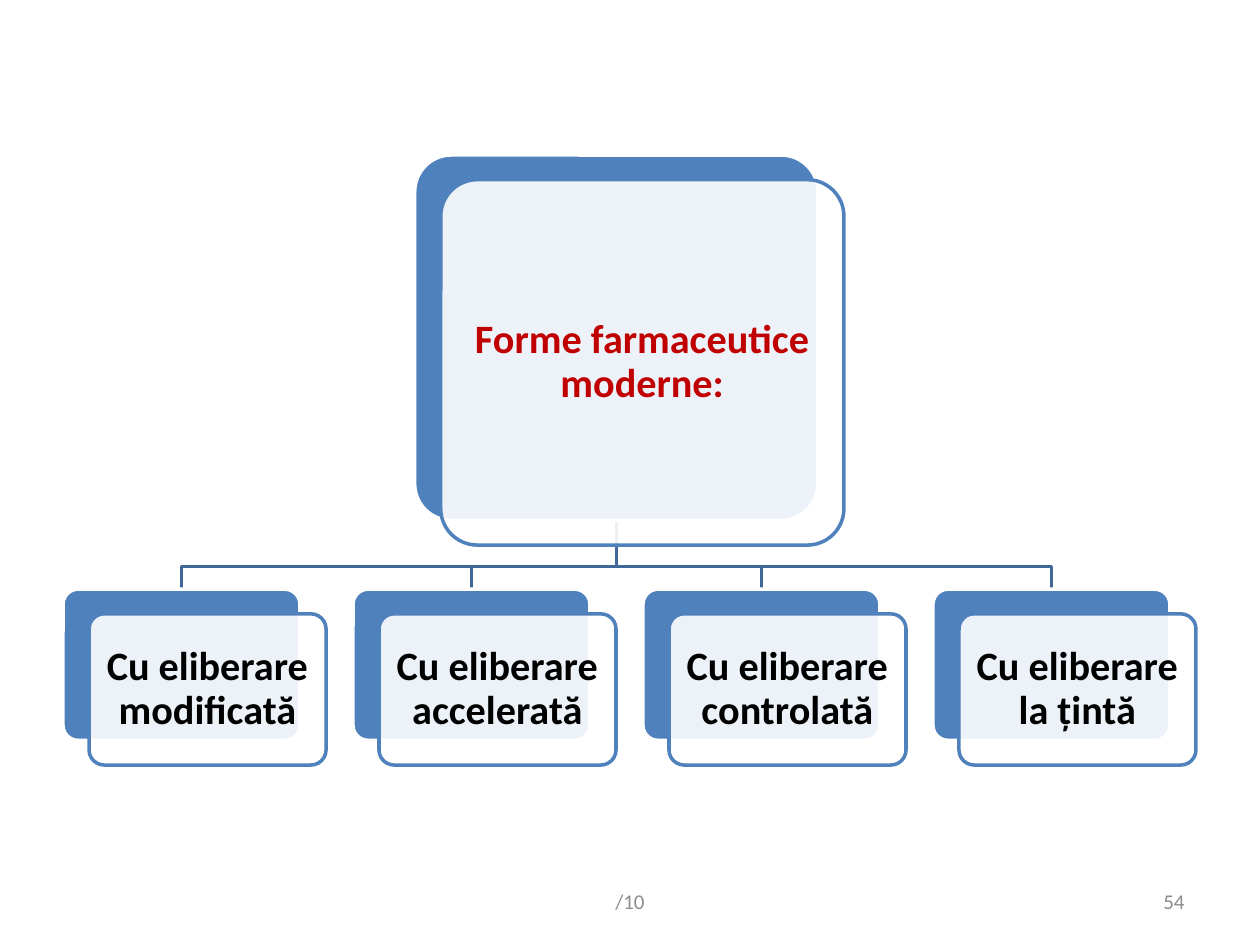
from lxml import etree
from pptx import Presentation
from pptx.dml.color import RGBColor
from pptx.enum.shapes import MSO_SHAPE
from pptx.enum.text import MSO_ANCHOR, PP_ALIGN
from pptx.oxml.ns import qn
from pptx.util import Pt

ROUNDED = MSO_SHAPE.ROUNDED_RECTANGLE
MIDDLE = MSO_ANCHOR.MIDDLE
CENTER, RIGHT = PP_ALIGN.CENTER, PP_ALIGN.RIGHT

WHITE = RGBColor(0xFF, 0xFF, 0xFF)
BLACK = RGBColor(0x00, 0x00, 0x00)
BLUE = RGBColor(0x4F, 0x81, 0xBD)
DARK_BLUE = RGBColor(0x3F, 0x67, 0x97)
RED = RGBColor(0xC0, 0x00, 0x00)
GRAY = RGBColor(0x8C, 0x8C, 0x8C)


class HierarchySlide:
    font = "Calibri"
    line_width = Pt(2)
    corner = 0.1
    card_shift = (14.9, 14.1)
    card_margin = Pt(7.2)

    def __init__(self, page):
        self.page = page

    def label(self, shape, text, size, color, align, bold=False):
        frame = shape.text_frame
        frame.text = text
        frame.word_wrap = True
        frame.vertical_anchor = MIDDLE
        para = frame.paragraphs[0]
        para.alignment = align
        font = para.runs[0].font
        font.name, font.size, font.bold = self.font, Pt(size), bold
        font.color.rgb = color
        return frame

    def panel(self, left, top, width, height, fill, line):
        shape = self.page.shapes.add_shape(
            ROUNDED, Pt(left), Pt(top), Pt(width), Pt(height))
        shape.adjustments[0] = self.corner
        shape.shadow.inherit = False
        shape.fill.solid()
        shape.fill.fore_color.rgb = fill
        shape.line.color.rgb = line
        shape.line.width = self.line_width
        return shape

    def card(self, left, top, width, height, text, color):
        """A blue back panel with a shifted, translucent text panel on it."""
        self.panel(left, top, width, height, BLUE, WHITE)
        right, down = self.card_shift
        front = self.panel(left + right, top + down, width, height, WHITE, BLUE)
        fill_color = front.element.spPr.find(qn("a:solidFill"))[0]
        etree.SubElement(fill_color, qn("a:alpha"), val="90000")
        frame = self.label(front, text, 23, color, CENTER, bold=True)
        frame.paragraphs[0].line_spacing = 0.9
        frame.margin_left = frame.margin_right = self.card_margin
        frame.margin_top = frame.margin_bottom = self.card_margin

    def branch(self, points):
        corners = [(Pt(x), Pt(y)) for x, y in points]
        builder = self.page.shapes.build_freeform(*corners[0])
        builder.add_line_segments(corners[1:], close=False)
        shape = builder.convert_to_shape()
        shape.shadow.inherit = False
        shape.fill.background()
        shape.line.color.rgb = DARK_BLUE
        shape.line.width = self.line_width

    def footer(self, left, width, text, align):
        box = self.page.shapes.add_textbox(
            Pt(left), Pt(500.5), Pt(width), Pt(28.75))
        self.label(box, text, 12, GRAY, align)


def main():
    deck = Presentation()
    deck.slide_width, deck.slide_height = Pt(720), Pt(540)
    slide = HierarchySlide(deck.slides.add_slide(deck.slide_layouts[6]))

    # Layout of the two levels
    root_left, root_top, root_width, root_height = 237, 88.6, 230.4, 208.8
    child_top, child_width, child_height = 336.7, 135.4, 86.4
    labels = ["Cu eliberare modificată", "Cu eliberare accelerată",
              "Cu eliberare controlată", "Cu eliberare la țintă"]
    child_lefts = [36 + 165.7 * index for index in range(len(labels))]
    root_center, root_bottom = root_left + root_width / 2, root_top + root_height
    bend = 323.7

    # Branches, behind the cards
    for left in reversed(child_lefts):
        center = left + child_width / 2
        slide.branch([(root_center, root_bottom), (root_center, bend),
                      (center, bend), (center, child_top)])

    # Cards
    slide.card(root_left, root_top, root_width, root_height,
               "Forme farmaceutice moderne:", RED)
    for left, label in zip(child_lefts, labels):
        slide.card(left, child_top, child_width, child_height, label, BLACK)

    # Footer
    slide.footer(516, 168, "54", RIGHT)
    slide.footer(246, 228, "/10", CENTER)

    deck.save("out.pptx")


if __name__ == "__main__":
    main()
